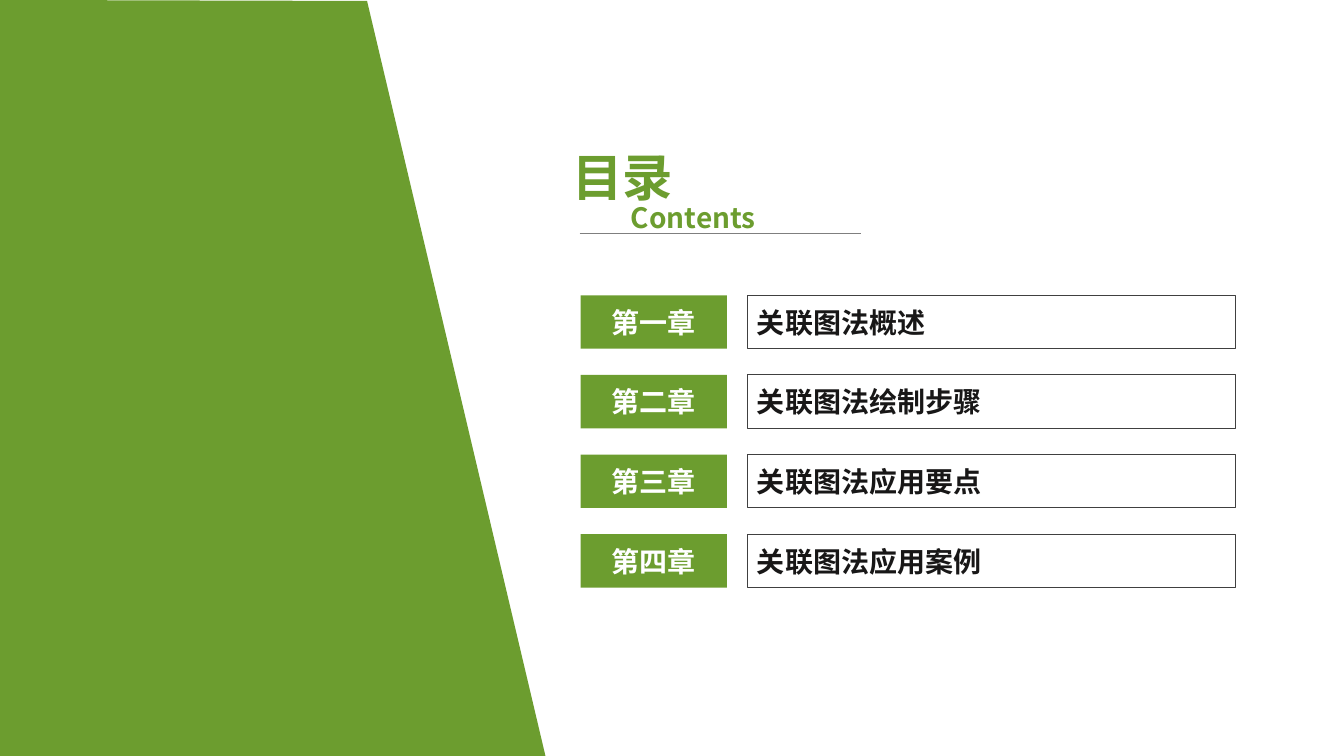
from dataclasses import dataclass

from lxml import etree
from pptx import Presentation
from pptx import util as u
from pptx.dml.color import RGBColor
from pptx.enum import shapes, text
from pptx.oxml.ns import qn


@dataclass(frozen=True)
class Theme:
    """Colours, font and type sizes of the slide."""
    green: str = "6C9D2F"
    white: str = "FFFFFF"
    ink: str = "181717"
    frame: str = "404040"
    rule: str = "7F7F7F"
    font: str = "Noto Sans CJK SC"
    title: int = 36
    body: int = 20


THEME = Theme()
WIDTH, HEIGHT = 13.33, 7.5
CHAPTERS = [
    ("第一章", "关联图法概述"),
    ("第二章", "关联图法绘制步骤"),
    ("第三章", "关联图法应用要点"),
    ("第四章", "关联图法应用案例"),
]


def inches(*lengths):
    """Convert lengths in inches to slide units."""
    return [u.Inches(length) for length in lengths]


def write(holder, words, size, colour, align=text.PP_ALIGN.LEFT):
    """Put one bold line of text in a shape or text box."""
    frame = holder.text_frame
    frame.word_wrap = True
    frame.vertical_anchor = text.MSO_ANCHOR.MIDDLE
    line = frame.paragraphs[0]
    line.text = words
    line.alignment = align
    font = line.font
    font.size, font.bold, font.name = u.Pt(size), True, THEME.font
    font.color.rgb = RGBColor.from_string(colour)
    latin = line._p.pPr.find(qn("a:defRPr")).find(qn("a:latin"))
    east_asian = etree.Element(qn("a:ea"), typeface=THEME.font)
    latin.addnext(east_asian)


def paint(shape, fill=None, line=None):
    """Give a shape a flat fill or an outline, without shadow."""
    shape.shadow.inherit = False
    if fill:
        shape.fill.solid()
        shape.fill.fore_color.rgb = RGBColor.from_string(fill)
    else:
        shape.fill.background()
    if line:
        shape.line.color.rgb = RGBColor.from_string(line)
        shape.line.width = u.Pt(0.75)
    else:
        shape.line.fill.background()


def add_side_panel(slide, left, top, width, height):
    """Draw the slanted panel whose top edge is shorter than its base."""
    outline = slide.shapes.build_freeform(*inches(left, top), scale=1.0)
    corners = [(0.673 * width, 0.01), (width, height), (0, height)]
    outline.add_line_segments([inches(left + x, top + y) for x, y in corners], close=True)
    paint(outline.convert_to_shape(), fill=THEME.green)


def add_heading(slide, left, top, width, height):
    """Place the title and its translation above a rule."""
    title_height, subtitle_height = 0.71, 0.44
    title = slide.shapes.add_textbox(*inches(left - 0.17, top, 1.57, title_height))
    write(title, "目录", THEME.title, THEME.green)
    subtitle = slide.shapes.add_textbox(
        *inches(left + 0.41, top + 0.55, 1.57, subtitle_height))
    write(subtitle, "Contents", THEME.body, THEME.green)
    bottom = top + height
    rule = slide.shapes.add_connector(
        shapes.MSO_CONNECTOR.STRAIGHT, *inches(left, bottom, left + width, bottom))
    rule.line.color.rgb = RGBColor.from_string(THEME.rule)
    rule.line.width = u.Pt(0.5)
    etree.SubElement(rule._element.spPr, qn("a:effectLst"))


def add_chapters(slide, left, top, width, height):
    """Stack one row per chapter: a filled number and a framed name."""
    row_height, number_width, gutter = 0.53, 1.45, 0.2
    pitch = (height - row_height) / (len(CHAPTERS) - 1)
    name_left = left + number_width + gutter
    name_width = width - number_width - gutter
    for row, (number, name) in enumerate(CHAPTERS):
        y = top + row * pitch
        name_box = slide.shapes.add_shape(
            shapes.MSO_SHAPE.RECTANGLE, *inches(name_left, y, name_width, row_height))
        paint(name_box, line=THEME.frame)
        write(name_box, name, THEME.body, THEME.ink)
        number_box = slide.shapes.add_shape(
            shapes.MSO_SHAPE.RECTANGLE, *inches(left, y, number_width, row_height))
        paint(number_box, fill=THEME.green)
        write(number_box, number, THEME.body, THEME.white, text.PP_ALIGN.CENTER)


def main():
    """Build the contents slide and save it."""
    deck = Presentation()
    deck.slide_width, deck.slide_height = inches(WIDTH, HEIGHT)
    slide = deck.slides.add_slide(deck.slide_layouts[6])
    add_side_panel(slide, 0, 0, 5.41, HEIGHT)
    add_chapters(slide, 5.76, 2.93, 6.49, 2.9)
    add_heading(slide, 5.75, 1.39, 2.79, 0.93)
    deck.save("out.pptx")


if __name__ == "__main__":
    main()
